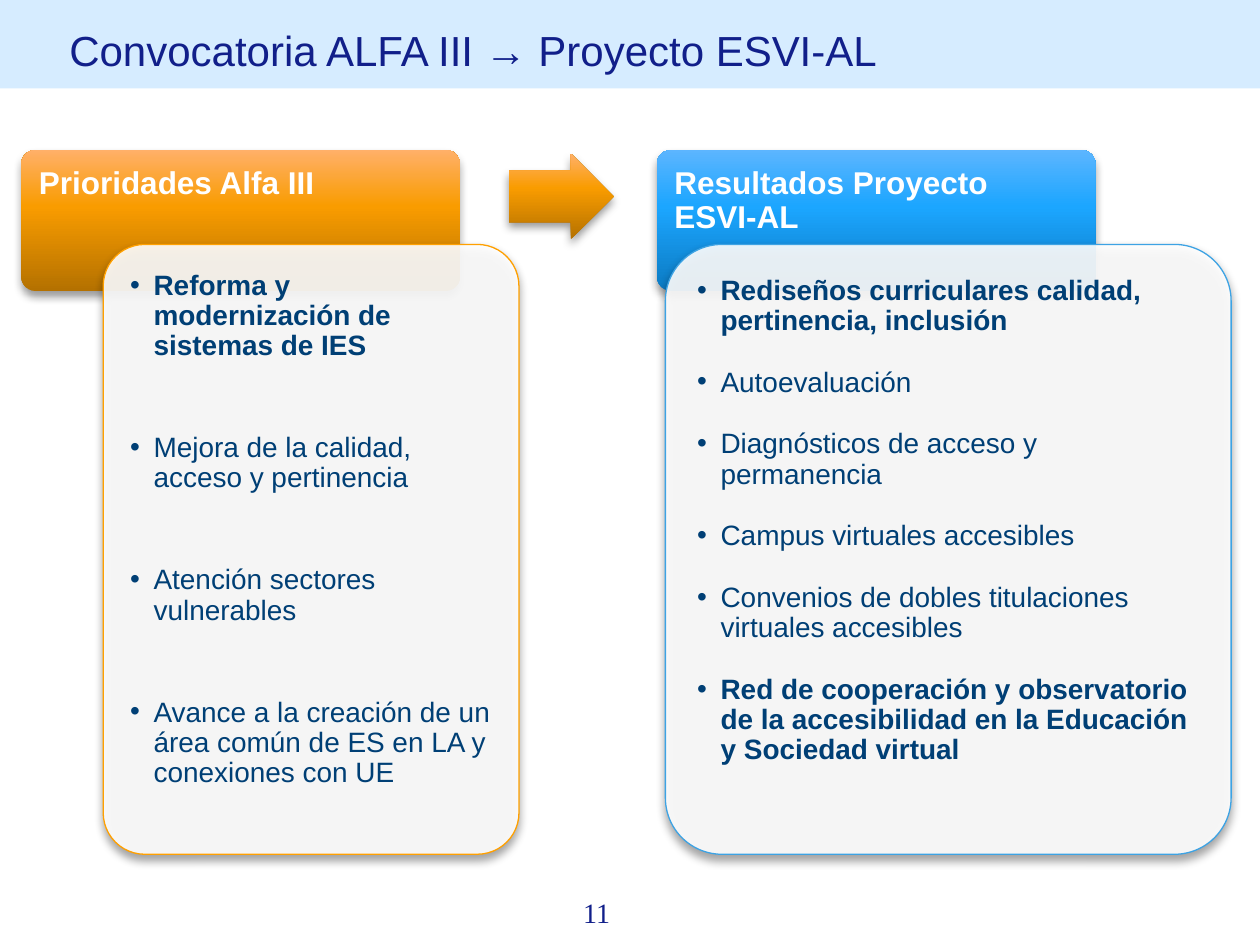
from lxml.etree import SubElement
from pptx import Presentation
from pptx.dml.color import RGBColor
from pptx.enum.shapes import MSO_SHAPE
from pptx.enum.text import MSO_ANCHOR, MSO_AUTO_SIZE, PP_ALIGN
from pptx.oxml import parse_xml
from pptx.oxml.ns import nsdecls, qn
from pptx.util import Pt

TITLE = "Convocatoria ALFA III → Proyecto ESVI-AL"
PAGE_NUMBER = "11"

# Boxes are left, top, width, height; list items are (text, bold).
COLUMNS = [
    dict(
        heading="Prioridades Alfa III", left=12.2, accent="orange",
        card=(59, 139.7, 237.6, 348.5), inset=6.7, gap=41,
        items=[
            ("Reforma y modernización de sistemas de IES", True),
            ("Mejora de la calidad, acceso y pertinencia", False),
            ("Atención sectores vulnerables", False),
            ("Avance a la creación de un área común de ES en LA "
             "y conexiones con UE", False),
        ],
    ),
    dict(
        heading="Resultados Proyecto ESVI-AL", left=375.4, accent="blue",
        card=(380.2, 139.7, 323.3, 348.5), inset=9.5, gap=18,
        items=[
            ("Rediseños curriculares calidad, pertinencia, inclusión", True),
            ("Autoevaluación", False),
            ("Diagnósticos de acceso y permanencia", False),
            ("Campus virtuales accesibles", False),
            ("Convenios de dobles titulaciones virtuales accesibles", False),
            ("Red de cooperación y observatorio de la accesibilidad en la "
             "Educación y Sociedad virtual", True),
        ],
    ),
]

THEME = dict(
    font="Arial", number_font="Times New Roman",
    title_size=24, heading_size=18, body_size=16,
    title="111F8A", bar="D6ECFF", heading="FFFFFF", body="003F75", card="FFFFFF",
    orange=dict(line="FFA000", stops=[(0, "B47100"), (60, "F99C00"), (100, "FFB069")]),
    blue=dict(line="3DA3E4", stops=[(0, "0B7AC2"), (60, "1CA6FF"), (100, "5CB5FF")]),
)
HEADING_TOP, HEADING_W, HEADING_H, HEADING_TEXT_H = 85.7, 250.6, 80.6, 54
ARROW = (290.9, 87.8, 59.8, 49)
INDENT = 13.5


def place(shape, box):
    shape.left, shape.top, shape.width, shape.height = map(Pt, box)


def set_frame(shape, margins, anchor=MSO_ANCHOR.TOP):
    """Margins run left, top, right, bottom."""
    tf = shape.text_frame
    tf.word_wrap = True
    tf.auto_size = MSO_AUTO_SIZE.NONE
    tf.vertical_anchor = anchor
    (tf.margin_left, tf.margin_top,
     tf.margin_right, tf.margin_bottom) = map(Pt, margins)
    return tf


def add_run(p, text, size, color, bold=False, font=THEME["font"]):
    p.alignment = PP_ALIGN.LEFT
    p.space_before = Pt(0)
    r = p.add_run()
    r.text = text
    r.font.name, r.font.size, r.font.bold = font, Pt(size), bold
    r.font.color.rgb = RGBColor.from_string(color)


def add_bullet(p):
    pPr = p._p.get_or_add_pPr()
    pPr.set("marL", str(Pt(INDENT)))
    pPr.set("indent", str(-Pt(INDENT)))
    SubElement(pPr, qn("a:buChar")).set("char", "•")


def add_shadowed_shape(s, kind, box, adjustments):
    shape = s.shapes.add_shape(kind, *map(Pt, box))
    for i, value in enumerate(adjustments):
        shape.adjustments[i] = value
    shape.line.fill.background()
    shape._element.spPr.append(parse_xml(
        f'<a:effectLst {nsdecls("a")}>'
        f'<a:outerShdw blurRad="{Pt(5.2)}" dist="{Pt(3)}" dir="5400000" rotWithShape="0">'
        '<a:srgbClr val="000000"><a:alpha val="40000"/></a:srgbClr>'
        '</a:outerShdw></a:effectLst>'))
    return shape


def fill_gradient(shape, stops):
    shape.fill.gradient()
    grad = shape._element.spPr.find(qn("a:gradFill"))
    stops_xml = "".join(
        f'<a:gs pos="{pos * 1000}"><a:srgbClr val="{color}"/></a:gs>'
        for pos, color in stops)
    grad.getparent().replace(grad, parse_xml(
        f'<a:gradFill {nsdecls("a")} rotWithShape="1"><a:gsLst>{stops_xml}</a:gsLst>'
        '<a:lin ang="16200000" scaled="0"/></a:gradFill>'))


def draw_column(s, column, heading, body):
    accent = THEME[column["accent"]]
    left = column["left"]
    panel = add_shadowed_shape(
        s, MSO_SHAPE.ROUNDED_RECTANGLE,
        (left, HEADING_TOP, HEADING_W, HEADING_H), [0.1])
    fill_gradient(panel, accent["stops"])

    place(heading, (left, HEADING_TOP, HEADING_W, HEADING_TEXT_H))
    p = set_frame(heading, (10, 10, 10, 5)).paragraphs[0]
    p.line_spacing = 0.9
    add_run(p, column["heading"], THEME["heading_size"], THEME["heading"], True)
    s.shapes._spTree.append(heading._element)

    card = add_shadowed_shape(
        s, MSO_SHAPE.ROUNDED_RECTANGLE, column["card"], [0.1])
    card.fill.solid()
    card.fill.fore_color.rgb = RGBColor.from_string(THEME["card"])
    color = card._element.spPr.find(qn("a:solidFill"))[0]
    SubElement(color, qn("a:alpha")).set("val", "90000")
    card.line.color.rgb = RGBColor.from_string(accent["line"])
    card.line.width = Pt(0.75)

    x, y, w, h = column["card"]
    d = column["inset"]
    place(body, (x + d, y + d, w - 2 * d, h - 2 * d))
    tf = set_frame(body, (8.6,) * 4)
    for i, (text, bold) in enumerate(column["items"]):
        p = tf.add_paragraph() if i else tf.paragraphs[0]
        add_bullet(p)
        p.line_spacing = 0.9
        add_run(p, text, THEME["body_size"], THEME["body"], bold)
        if i:
            p.space_before = Pt(column["gap"])
    s.shapes._spTree.append(body._element)


def main():
    prs = Presentation()
    prs.slide_width, prs.slide_height = Pt(720), Pt(540)
    s = prs.slides.add_slide(prs.slide_layouts[4])
    title, *texts = s.placeholders

    place(title, (0, 0, 720, 50.6))
    title.fill.solid()
    title.fill.fore_color.rgb = RGBColor.from_string(THEME["bar"])
    tf = set_frame(title, (39.6, 9.6, 28, 3.6), MSO_ANCHOR.MIDDLE)
    add_run(tf.paragraphs[0], TITLE, THEME["title_size"], THEME["title"])

    for column, heading, body in zip(COLUMNS, texts[::2], texts[1::2]):
        draw_column(s, column, heading, body)

    arrow = add_shadowed_shape(s, MSO_SHAPE.RIGHT_ARROW, ARROW, [0.6, 0.5])
    fill_gradient(arrow, THEME["orange"]["stops"])

    number = s.shapes.add_textbox(*map(Pt, (326.2, 508.3, 48.2, 26.6)))
    tf = set_frame(number, (7.2, 3.6, 7.2, 3.6))
    add_run(tf.paragraphs[0], PAGE_NUMBER, THEME["body_size"], THEME["title"],
            font=THEME["number_font"])

    prs.save("out.pptx")


if __name__ == "__main__":
    main()
